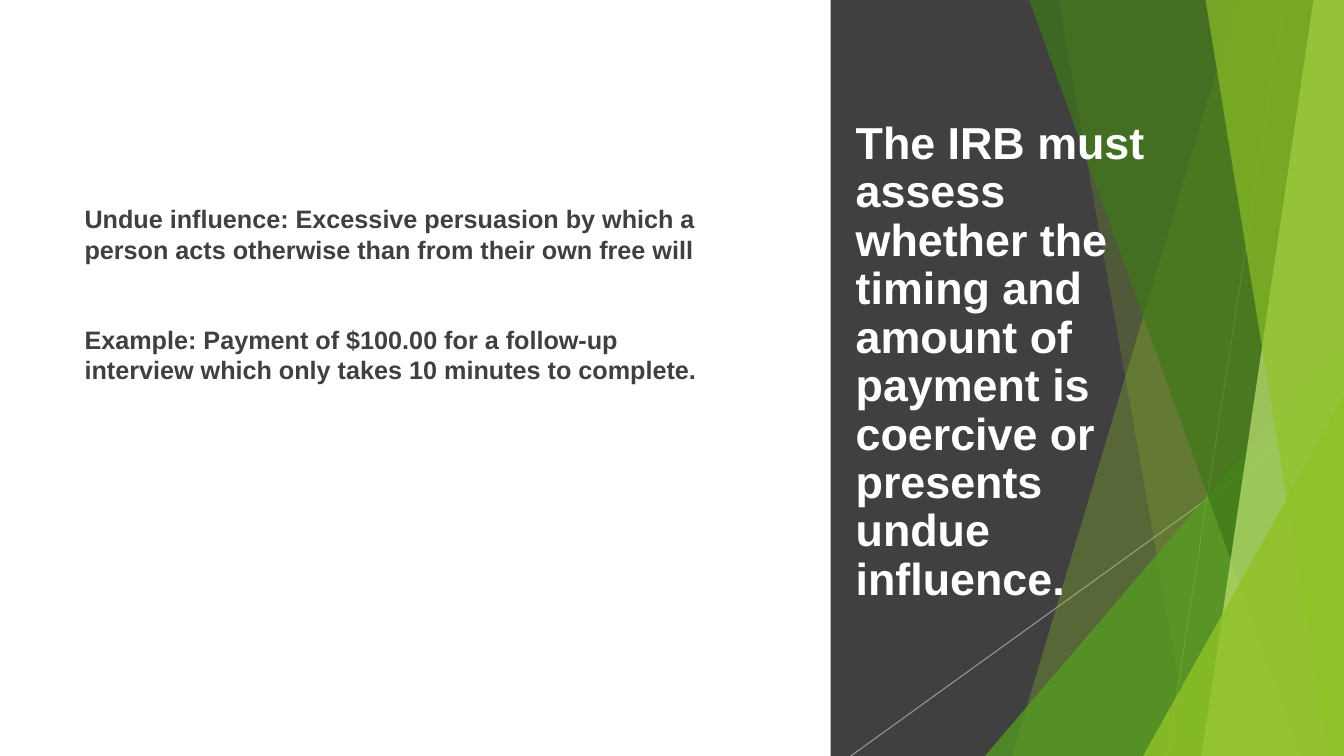
from dataclasses import dataclass

from lxml import etree
from pptx import Presentation, util as u
from pptx.dml.color import RGBColor
from pptx.enum import shapes, text
from pptx.oxml import ns


@dataclass(frozen=True)
class Theme:
    font: str = "Arial"
    white: str = "FFFFFF"
    charcoal: str = "404040"
    silver: str = "BFBFBF"
    lime: str = "90C226"
    green: str = "54A021"
    forest: str = "3F7819"
    pale: str = "C0E474"
    title_size: float = 32
    body_size: float = 18
    ray_width: float = 0.75
    ray_opacity: int = 70


@dataclass(frozen=True)
class Area:
    left: float
    top: float
    width: float
    height: float


@dataclass(frozen=True)
class Ray:
    x1: float
    y1: float
    x2: float
    y2: float


@dataclass(frozen=True)
class Band:
    top_x: float
    bottom_x: float
    color: str
    opacity: int


@dataclass(frozen=True)
class Wedge:
    left: float
    top: float
    color: str
    opacity: int


THEME = Theme()
PANEL = Area(61.8, 0, 38.2, 100)
BODY = Area(5.55, 20.67, 50.48, 63.47)
TITLE = Area(62.93, 16.27, 23.55, 63.47)
RAYS = [Ray(95.55, 0, 86.85, 100), Ray(99, 54.27, 63.3, 100)]
FACETS = [
    Band(92.1, 75.3, THEME.lime, 30),
    Band(78.75, 88.73, THEME.lime, 20),
    Wedge(73.28, 44.4, THEME.green, 72),
    Band(76.58, 96.83, THEME.forest, 70),
    Band(97.73, 89.4, THEME.pale, 70),
    Band(89.7, 98.85, THEME.lime, 65),
    Wedge(85.05, 52.4, THEME.lime, 80),
]

prs = Presentation()
prs.slide_width, prs.slide_height = u.Inches(13.333), u.Inches(7.5)
slide = prs.slides.add_slide(prs.slide_layouts[6])


def across(percent: float) -> int:
    return round(prs.slide_width * percent / 100)


def down(percent: float) -> int:
    return round(prs.slide_height * percent / 100)


def place(area: Area) -> tuple[int, int, int, int]:
    return across(area.left), down(area.top), across(area.width), down(area.height)


def set_opacity(element, percent: int) -> None:
    for color in element.spPr.iter(ns.qn("a:srgbClr")):
        etree.SubElement(color, ns.qn("a:alpha"), val=str(percent * 1000))


def paint(shape, color: str, opacity: int = 100) -> None:
    shape.shadow.inherit = False
    shape.line.fill.background()
    shape.fill.solid()
    shape.fill.fore_color.rgb = RGBColor.from_string(color)
    if opacity < 100:
        set_opacity(shape.element, opacity)


def draw_panel(area: Area) -> None:
    paint(slide.shapes.add_shape(shapes.MSO_SHAPE.RECTANGLE, *place(area)), THEME.charcoal)


def draw_ray(ray: Ray) -> None:
    line = slide.shapes.add_connector(
        shapes.MSO_CONNECTOR.STRAIGHT,
        across(ray.x1), down(ray.y1), across(ray.x2), down(ray.y2),
    )
    line.line.color.rgb = RGBColor.from_string(THEME.silver)
    line.line.width = u.Pt(THEME.ray_width)
    set_opacity(line.element, THEME.ray_opacity)
    etree.SubElement(line.element.spPr, ns.qn("a:effectLst"))


def draw_facet(facet: Band | Wedge) -> None:
    if isinstance(facet, Band):
        outline = slide.shapes.build_freeform(across(facet.top_x), 0, scale=1.0)
        outline.add_line_segments([
            (across(100), 0),
            (across(100), down(100)),
            (across(facet.bottom_x), down(100)),
        ])
        shape = outline.convert_to_shape()
    else:
        area = Area(facet.left, facet.top, 100 - facet.left, 100 - facet.top)
        shape = slide.shapes.add_shape(shapes.MSO_SHAPE.ISOSCELES_TRIANGLE, *place(area))
        shape.adjustments[0] = 1
    paint(shape, facet.color, facet.opacity)


def write(
    paragraphs: list[str],
    area: Area,
    *,
    size: float,
    color: str,
    anchor: text.MSO_ANCHOR,
    spacing: float = 1,
    gap: float = 0,
    inset_top: float = 0.05,
    inset_right: float = 0.1,
) -> None:
    frame = slide.shapes.add_textbox(*place(area)).text_frame
    frame.word_wrap = True
    frame.vertical_anchor = anchor
    frame.margin_top, frame.margin_right = u.Inches(inset_top), u.Inches(inset_right)
    for index, wording in enumerate(paragraphs):
        paragraph = frame.add_paragraph() if index else frame.paragraphs[0]
        paragraph.line_spacing = spacing
        paragraph.space_before = u.Pt(gap if index else 0)
        run = paragraph.add_run()
        run.text = wording
        run.font.name = THEME.font
        run.font.size = u.Pt(size)
        run.font.bold = True
        run.font.color.rgb = RGBColor.from_string(color)


def main() -> None:
    write(
        [
            "Undue influence: Excessive persuasion by which a person acts "
            "otherwise than from their own free will",
            "Example: Payment of $100.00 for a follow-up interview which only "
            "takes 10 minutes to complete.",
        ],
        BODY, size=THEME.body_size, color=THEME.charcoal, anchor=text.MSO_ANCHOR.TOP,
        gap=43, inset_top=0.47, inset_right=0.3,
    )
    draw_panel(PANEL)
    for ray in RAYS:
        draw_ray(ray)
    for facet in FACETS:
        draw_facet(facet)
    write(
        ["The IRB must assess whether the timing and amount of payment is "
         "coercive or presents undue influence."],
        TITLE, size=THEME.title_size, color=THEME.white, anchor=text.MSO_ANCHOR.MIDDLE,
        spacing=0.9,
    )
    prs.save("out.pptx")


if __name__ == "__main__":
    main()
